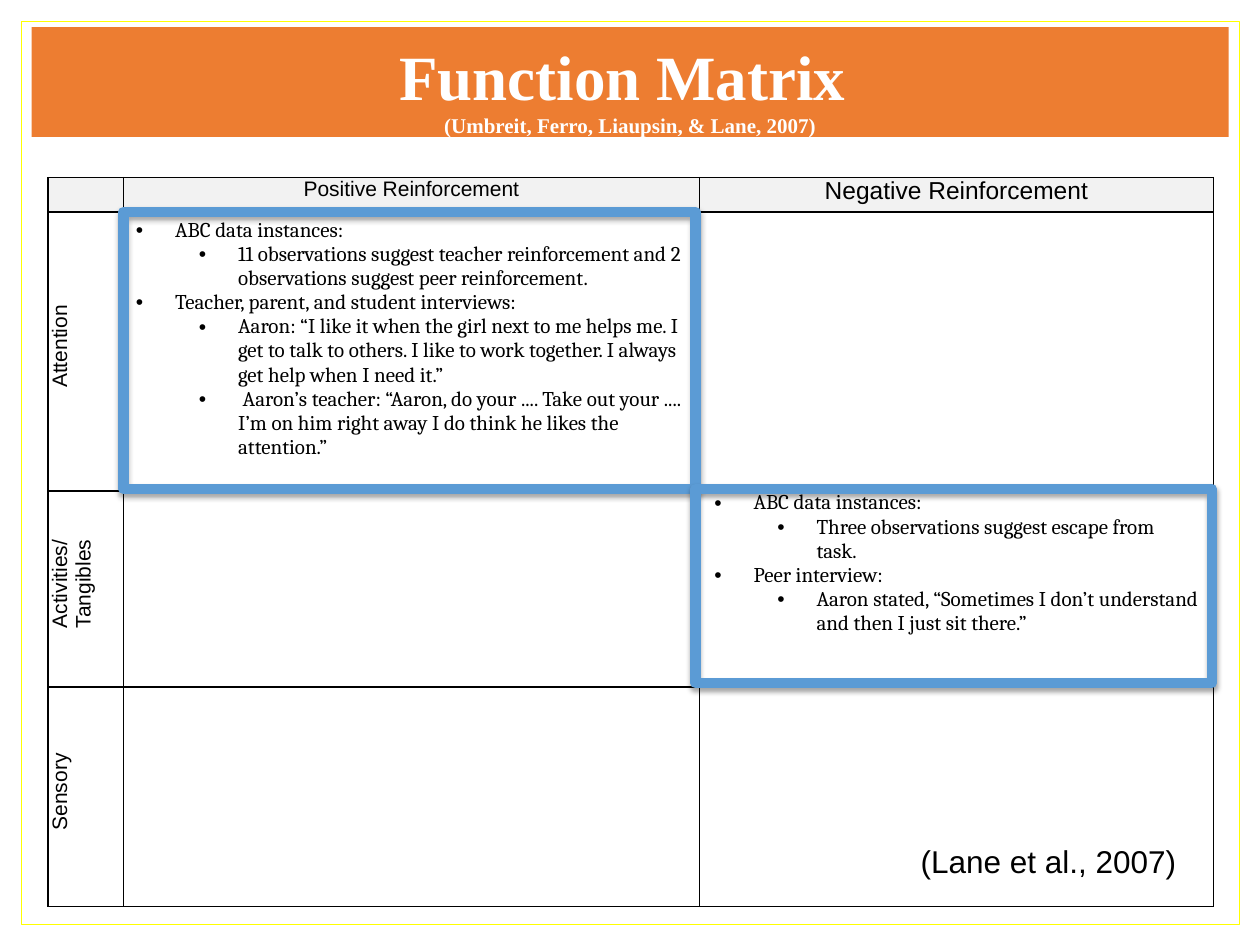
from lxml import etree
from pptx import Presentation
from pptx import util as u
from pptx.dml.color import RGBColor
from pptx.enum import shapes, text
from pptx.oxml import ns

COLORS = {"black": "000000", "white": "FFFFFF", "frame": "FFFF00", "banner": "ED7D31",
          "header": "F2F2F2", "highlight": "5B9BD5"}
CENTER = text.PP_ALIGN.CENTER


def style_runs(paragraph, size, font, color="black", bold=False):
    for run in paragraph.runs:
        run.font.size = u.Pt(size)
        run.font.name = font
        run.font.bold = bold
        run.font.color.rgb = RGBColor.from_string(COLORS[color])


def add_rectangle(left, top, width, height, fill=None, line=None, weight=0.75):
    box = slide.shapes.add_shape(shapes.MSO_SHAPE.RECTANGLE, u.Cm(left), u.Cm(top),
                                 u.Cm(width), u.Cm(height))
    box.shadow.inherit = False
    for part, color in ((box.fill, fill), (box.line.fill, line)):
        if color:
            part.solid()
            part.fore_color.rgb = RGBColor.from_string(COLORS[color])
        else:
            part.background()
    if line:
        box.line.width = u.Pt(weight)
    return box


prs = Presentation()
prs.slide_width, prs.slide_height = u.Cm(25.4), u.Cm(19.05)
slide = prs.slides.add_slide(prs.slide_layouts[6])

# Page frame
add_rectangle(0.43, 0.43, 24.56, 18.21, line="frame")

# Matrix: plain strings are headings, lists hold (level, bullet text)
attention_positive = [
    (0, "ABC data instances:"),
    (1, "11 observations suggest teacher reinforcement and 2 observations suggest "
        "peer reinforcement."),
    (0, "Teacher, parent, and student interviews:"),
    (1, "Aaron: “I like it when the girl next to me helps me. I get to talk to others. "
        "I like to work together. I always get help when I need it.”"),
    (1, " Aaron’s teacher: “Aaron, do your .... Take out your .... I’m on him right away "
        "I do think he likes the attention.”"),
]
activities_negative = [
    (0, "ABC data instances:"),
    (1, "Three observations suggest escape from task."),
    (0, "Peer interview:"),
    (1, "Aaron stated, “Sometimes I don’t understand and then I just sit there.”"),
]
matrix = [
    ["", "Positive Reinforcement", "Negative Reinforcement"],
    ["Attention", attention_positive, ""],
    ["Activities/Tangibles", "", activities_negative],
    ["Sensory", "", ""],
]
col_widths = [1.52, 11.61, 10.36]
row_heights = [0.69, 5.63, 3.95, 4.43]
grid = slide.shapes.add_table(4, 3, u.Cm(0.97), u.Cm(3.58), u.Cm(sum(col_widths)),
                              u.Cm(sum(row_heights))).table
grid.first_row = grid.horz_banding = False
for column, width in zip(grid.columns, col_widths):
    column.width = u.Cm(width)
for row, height in zip(grid.rows, row_heights):
    row.height = u.Cm(height)

for r, entries in enumerate(matrix):
    for c, entry in enumerate(entries):
        cell = grid.cell(r, c)
        cell.margin_left = cell.margin_right = u.Cm(0.18 if c == 0 else 0.3)
        cell.margin_top = cell.margin_bottom = 0
        frame = cell.text_frame
        heading = frame.paragraphs[0]
        if isinstance(entry, list):
            if r == 1:
                cell.margin_left = cell.margin_right = u.Cm(0.25)
                cell.margin_top = cell.margin_bottom = u.Cm(0.13)
            for i, (level, line) in enumerate(entry):
                item = frame.add_paragraph() if i else heading
                item.text = line
                item.level = level
                props = item._p.get_or_add_pPr()
                props.set("marL", str(u.Cm(0.79 + 1.27 * level)))
                props.set("indent", str(-u.Cm(0.79)))
                etree.SubElement(props, ns.qn("a:buFont"), typeface="Arial")
                etree.SubElement(props, ns.qn("a:buChar"), char="•")
                style_runs(item, 12, "Cambria")
        elif entry:
            heading.text = entry
            heading.alignment = CENTER
            style_runs(heading, 14 if c == 2 else 12, "Arial")
        else:
            etree.SubElement(heading._p, ns.qn("a:endParaRPr"), sz="1200")

        # Borders come before the fill in the cell properties
        cell_props = cell._tc.get_or_add_tcPr()
        for side in ("a:lnL", "a:lnR", "a:lnT", "a:lnB"):
            border = etree.SubElement(cell_props, ns.qn(side), w=str(u.Pt(1)))
            ink = etree.SubElement(border, ns.qn("a:solidFill"))
            etree.SubElement(ink, ns.qn("a:srgbClr"), val=COLORS["black"])
        if r == 0:
            cell.fill.solid()
            cell.fill.fore_color.rgb = RGBColor.from_string(COLORS["header"])
        else:
            cell.fill.background()
        if r and c == 0:
            cell_props.set("vert", "vert270")
            cell.vertical_anchor = text.MSO_ANCHOR.MIDDLE
            heading._p.get_or_add_pPr().set("marL", str(u.Cm(0.2)))

# Title banner
banner = add_rectangle(0.64, 0.55, 24.13, 2.21, fill="banner")
banner_frame = banner.text_frame
banner_frame.margin_top, banner_frame.margin_bottom = u.Cm(0.22), 0
banner_frame.vertical_anchor = text.MSO_ANCHOR.MIDDLE
title = banner_frame.paragraphs[0]
title.text = "Function Matrix \v(Umbreit, Ferro, Liaupsin, & Lane, 2007)"
title.alignment = CENTER
style_runs(title, 36, "Times New Roman", "white", bold=True)
title.runs[1].font.size = u.Pt(12)

# Highlighted cells with a soft shadow below
for place in ((2.49, 4.27, 11.53, 5.59), (14.02, 9.86, 10.41, 3.91)):
    highlight = add_rectangle(*place, line="highlight", weight=6)
    effects = highlight._element.spPr.find(ns.qn("a:effectLst"))
    shadow = etree.SubElement(effects, ns.qn("a:outerShdw"), blurRad=str(u.Pt(3.1)),
                              dist=str(u.Pt(1.8)), dir="5400000", rotWithShape="0")
    shade = etree.SubElement(shadow, ns.qn("a:srgbClr"), val=COLORS["black"])
    etree.SubElement(shade, ns.qn("a:alpha"), val="35000")

# Citation
citation = slide.shapes.add_textbox(u.Cm(18.31), u.Cm(16.84), u.Cm(5.72), u.Cm(1.02))
citation.text_frame.text = "(Lane et al., 2007)"
citation.text_frame.word_wrap = False
citation.text_frame.auto_size = text.MSO_AUTO_SIZE.SHAPE_TO_FIT_TEXT
style_runs(citation.text_frame.paragraphs[0], 18, "Arial")

prs.save("out.pptx")
